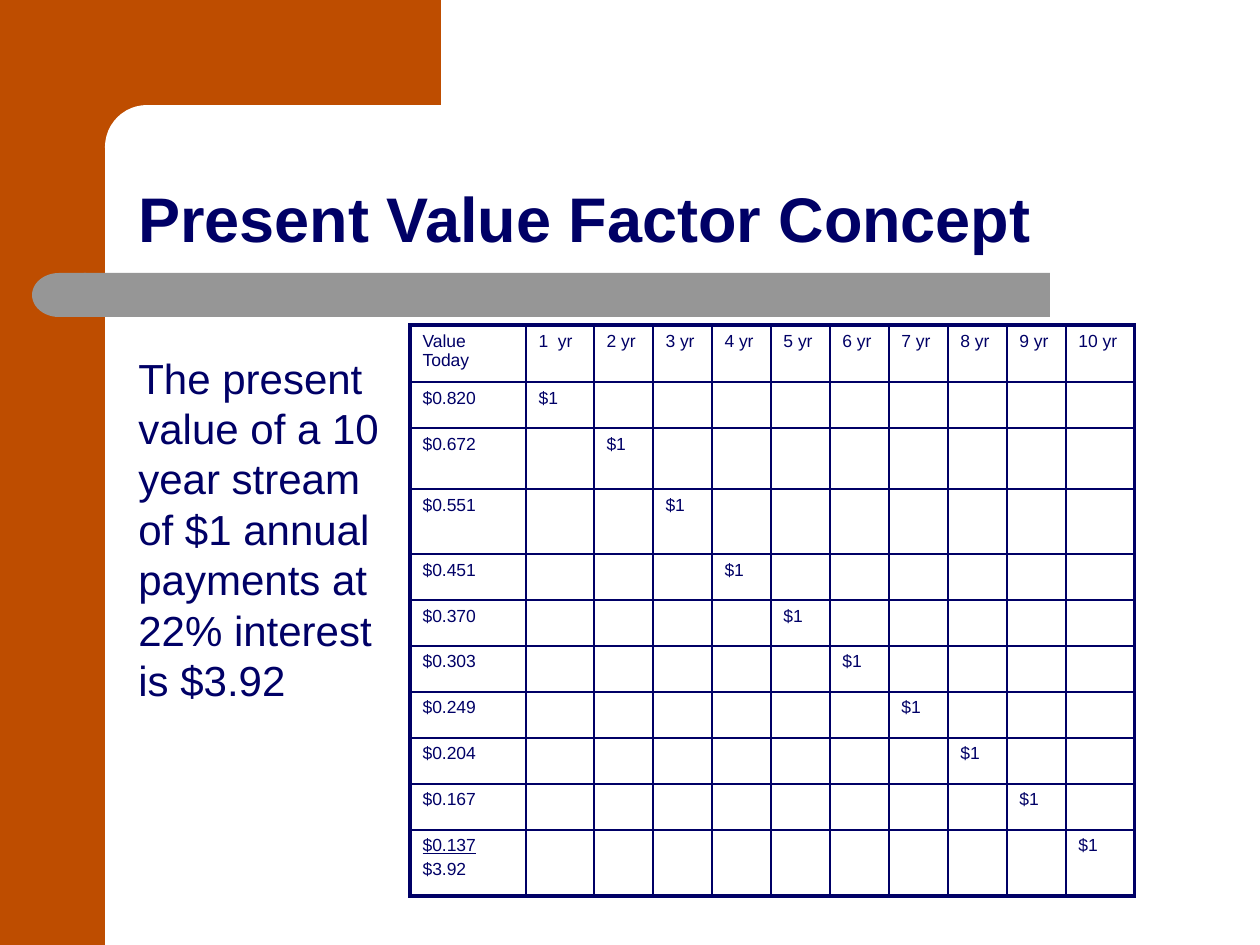
"""Build the present value factor slide with its payment table."""
from lxml.etree import SubElement
from pptx import Presentation
from pptx.dml.color import RGBColor
from pptx.enum.shapes import MSO_SHAPE as SHAPE
from pptx.enum.text import MSO_ANCHOR as ANCHOR
from pptx.oxml.ns import qn
from pptx.util import Pt

EMU_PER_PX = 914400 / 126
NAVY = RGBColor(0x00, 0x00, 0x66)
ORANGE = RGBColor(0xBE, 0x4D, 0x00)
GRAY = RGBColor(0x96, 0x96, 0x96)
WHITE = RGBColor(0xFF, 0xFF, 0xFF)
FONT = "Arial"
THIN, THICK = Pt(1), Pt(2.25)

PRESENT_VALUES = ["$0.820", "$0.672", "$0.551", "$0.451", "$0.370", "$0.303",
                  "$0.249", "$0.204", "$0.167", "$0.137"]
YEARS = len(PRESENT_VALUES)
TOTAL = "$3.92"
COLUMN_WIDTHS = [116, 68] + [59] * 8 + [69]
ROW_HEIGHTS = [57, 46, 61, 65] + [46] * 6 + [66]


def px(length):
    return round(length * EMU_PER_PX)


def write(paragraph, text, size=10, bold=False, underline=None, before=None, spacing=None):
    run = paragraph.add_run()
    run.text = text
    run.font.name, run.font.size = FONT, Pt(size)
    run.font.bold, run.font.underline = bold, underline
    run.font.color.rgb = NAVY
    if before is not None:
        paragraph.space_before = Pt(before)
    if spacing is not None:
        paragraph.line_spacing = spacing


class SlideBuilder:
    """Draws each kind of element on the current slide."""

    def __init__(self, slide):
        self.slide = slide

    def panel(self, kind, box, color, rounding=None, rotation=0):
        panel = self.slide.shapes.add_shape(kind, *map(px, box))
        panel.shadow.inherit = False
        panel.fill.solid()
        panel.fill.fore_color.rgb = color
        panel.line.fill.background()
        panel.rotation = rotation
        if rounding is not None:
            panel.adjustments[0] = rounding

    def text(self, box, words, anchor=ANCHOR.TOP, **style):
        frame = self.slide.shapes.add_textbox(*map(px, box)).text_frame
        frame.word_wrap = True
        frame.vertical_anchor = anchor
        write(frame.paragraphs[0], words, **style)

    def border(self, cell, side, width):
        line = SubElement(cell._tc.get_or_add_tcPr(), qn(f"a:{side}"), w=str(width))
        fill = SubElement(line, qn("a:solidFill"))
        SubElement(fill, qn("a:srgbClr"), val=str(NAVY))

    def table(self, left, top, rows, widths, heights):
        box = map(px, (left, top, sum(widths), sum(heights)))
        table = self.slide.shapes.add_table(len(heights), len(widths), *box).table
        table.first_row = table.horz_banding = False
        for column, width in zip(table.columns, widths):
            column.width = px(width)
        for row, height in zip(table.rows, heights):
            row.height = px(height)
        last_row, last_column = len(heights) - 1, len(widths) - 1
        for r, row in enumerate(rows):
            for c, words in enumerate(row):
                cell = table.cell(r, c)
                outer = {"lnL": c == 0, "lnR": c == last_column,
                         "lnT": r == 0, "lnB": r == last_row}
                for side, is_outer in outer.items():
                    self.border(cell, side, THICK if is_outer else THIN)
                cell.fill.background()
                paragraph = cell.text_frame.paragraphs[0]
                if words:
                    write(paragraph, words, before=2, underline=(r == last_row and c == 0) or None)
                else:
                    paragraph._p.get_or_add_endParaRPr().set("sz", "1000")
        return table


def main():
    deck = Presentation()
    deck.slide_width, deck.slide_height = px(1260), px(945)
    builder = SlideBuilder(deck.slides.add_slide(deck.slide_layouts[6]))

    builder.panel(SHAPE.RECTANGLE, (0, 0, 105, 945), ORANGE)
    builder.panel(SHAPE.RECTANGLE, (94, 0, 347, 147), ORANGE)
    builder.panel(SHAPE.ROUNDED_RECTANGLE, (105, 105, 703, 84), WHITE, rounding=0.5)
    builder.panel(SHAPE.ROUNDED_RECTANGLE, (84, 273, 966, 44), GRAY, rounding=0)
    builder.panel(SHAPE.FLOWCHART_DELAY, (32, 273, 54, 44), GRAY, rotation=180)

    builder.text((126, 105, 1102, 157), "Present Value Factor Concept",
                 anchor=ANCHOR.BOTTOM, size=36, bold=True, spacing=0.9)

    header = ["Value Today", "1  yr"] + [f"{year} yr" for year in range(2, YEARS + 1)]
    payments = [[value] + ["$1" if year == due else "" for year in range(YEARS)]
                for due, value in enumerate(PRESENT_VALUES)]
    schedule = builder.table(410, 325, [header] + payments, COLUMN_WIDTHS, ROW_HEIGHTS)
    write(schedule.cell(YEARS, 0).text_frame.add_paragraph(), TOTAL, before=2)

    builder.text((126, 346, 275, 365),
                 "The present value of a 10 year stream of $1 annual payments "
                 "at 22% interest is $3.92", size=24)
    deck.save("out.pptx")


if __name__ == "__main__":
    main()
